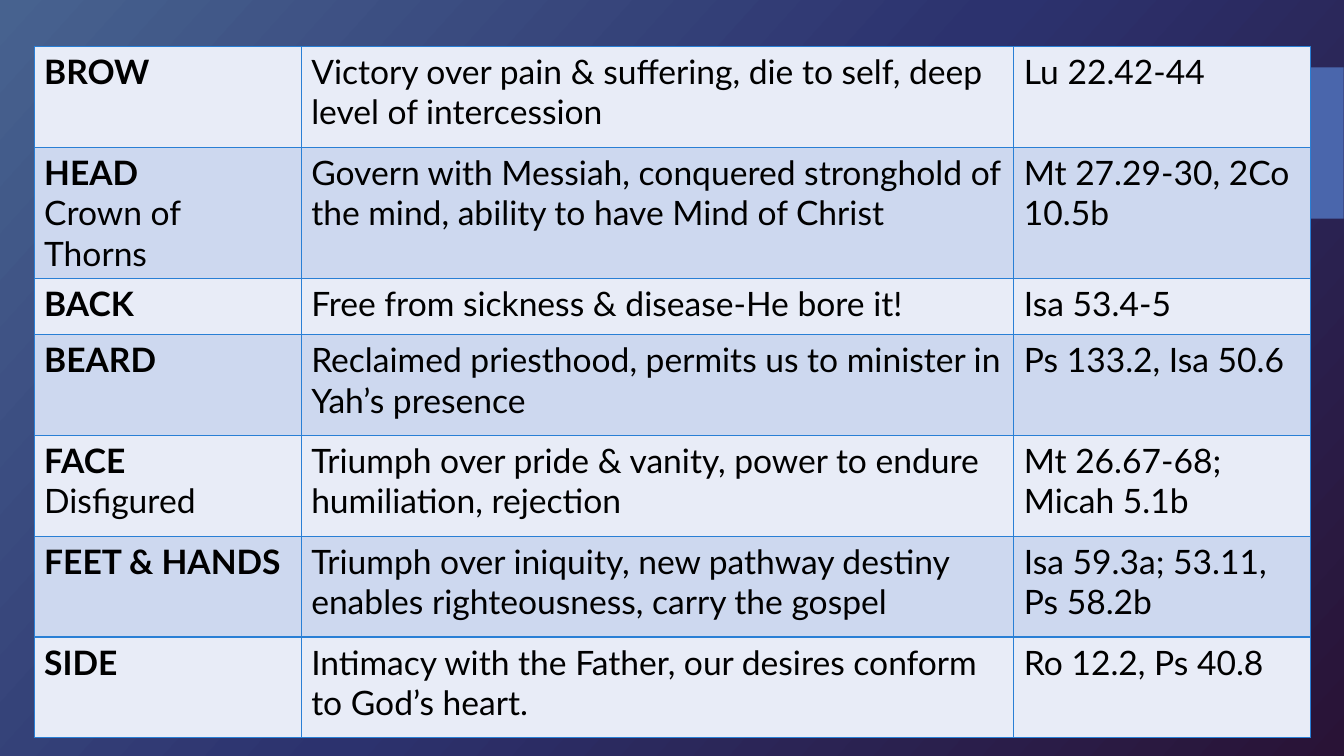
import copy

import pptx
import pptx.dml.color
import pptx.enum.shapes
import pptx.oxml
import pptx.oxml.ns
import pptx.util
from pptx.util import Cm

BACKDROP = ((0, "47628F"), (0.5, "2C326E"), (1, "291336"))
BAND_FILLS = ("E8ECF7", "CDD8EF")
BORDER = "297FD5"
COLUMN_WIDTHS = (6.73, 17.96, 7.47)
ROW_HEIGHT = 2.54
SHORT_ROW_HEIGHT = 1.42

WOUNDS = (
    (("BROW",),
     "Victory over pain & suffering, die to self, deep level of intercession",
     "Lu 22.42-44"),
    (("HEAD", "Crown of", "Thorns"),
     "Govern with Messiah, conquered stronghold of the mind, ability to have Mind of Christ",
     "Mt 27.29-30, 2Co 10.5b"),
    (("BACK",),
     "Free from sickness & disease-He bore it!",
     "Isa 53.4-5"),
    (("BEARD",),
     "Reclaimed priesthood, permits us to minister in Yah’s presence",
     "Ps 133.2, Isa 50.6"),
    (("FACE", "Disfigured"),
     "Triumph over pride & vanity, power to endure humiliation, rejection",
     "Mt 26.67-68; Micah 5.1b"),
    (("FEET & HANDS",),
     "Triumph over iniquity, new pathway destiny enables righteousness, carry the gospel",
     "Isa 59.3a; 53.11, Ps 58.2b"),
    (("SIDE",),
     "Intimacy with the Father, our desires conform to God’s heart.",
     "Ro 12.2, Ps 40.8"),
)


def color(value):
    return pptx.dml.color.RGBColor.from_string(value)


def paint_backdrop(slide):
    fill = slide.background.fill
    fill.gradient()
    fill.gradient_angle = 318
    stop_list = slide.element.find(".//" + pptx.oxml.ns.qn("a:gsLst"))
    stop_list.append(copy.deepcopy(stop_list[0]))
    for stop, (position, value) in zip(fill.gradient_stops, BACKDROP):
        stop.position = position
        stop.color.rgb = color(value)


def add_side_tab(slide):
    tab = slide.shapes.add_shape(
        pptx.enum.shapes.MSO_SHAPE.RECTANGLE, Cm(29.41), Cm(1.7), Cm(4.45), Cm(3.81))
    tab.shadow.inherit = False
    tab.fill.solid()
    tab.fill.fore_color.rgb = color("4A66AC")
    tab.line.fill.background()


def add_borders(cell):
    properties = cell._tc.get_or_add_tcPr()
    for index, side in enumerate(("lnL", "lnR", "lnT", "lnB")):
        border = pptx.oxml.parse_xml(
            f'<a:{side} {pptx.oxml.ns.nsdecls("a")} w="12700"><a:solidFill>'
            f'<a:srgbClr val="{BORDER}"/></a:solidFill></a:{side}>')
        properties.insert(index, border)


def write_run(paragraph, text, bold):
    run = paragraph.add_run()
    run.text = text
    run.font.name = "Lato"
    run.font.size = pptx.util.Pt(24)
    run.font.bold = bold
    run.font.color.rgb = color("000000")


def fill_cell(cell, lines, band, titled):
    cell.fill.solid()
    cell.fill.fore_color.rgb = color(band)
    add_borders(cell)
    frame = cell.text_frame
    for index, line in enumerate(lines):
        paragraph = frame.add_paragraph() if index else frame.paragraphs[0]
        write_run(paragraph, line, titled and index == 0)


def add_wounds_table(slide):
    heights = [SHORT_ROW_HEIGHT if part == ("BACK",) else ROW_HEIGHT
               for part, _, _ in WOUNDS]
    table = slide.shapes.add_table(
        len(WOUNDS), len(COLUMN_WIDTHS), Cm(0.86), Cm(1.17),
        Cm(sum(COLUMN_WIDTHS)), Cm(sum(heights))).table
    for column, width in zip(table.columns, COLUMN_WIDTHS):
        column.width = Cm(width)
    for index, (part, meaning, verses) in enumerate(WOUNDS):
        table.rows[index].height = Cm(heights[index])
        band = BAND_FILLS[index % 2]
        fill_cell(table.cell(index, 0), part, band, True)
        fill_cell(table.cell(index, 1), (meaning,), band, False)
        fill_cell(table.cell(index, 2), (verses,), band, False)


def main():
    deck = pptx.Presentation()
    deck.slide_width = Cm(33.87)
    deck.slide_height = Cm(19.05)
    slide = deck.slides.add_slide(deck.slide_layouts[6])
    paint_backdrop(slide)
    add_side_tab(slide)
    add_wounds_table(slide)
    deck.save("out.pptx")


if __name__ == "__main__":
    main()
